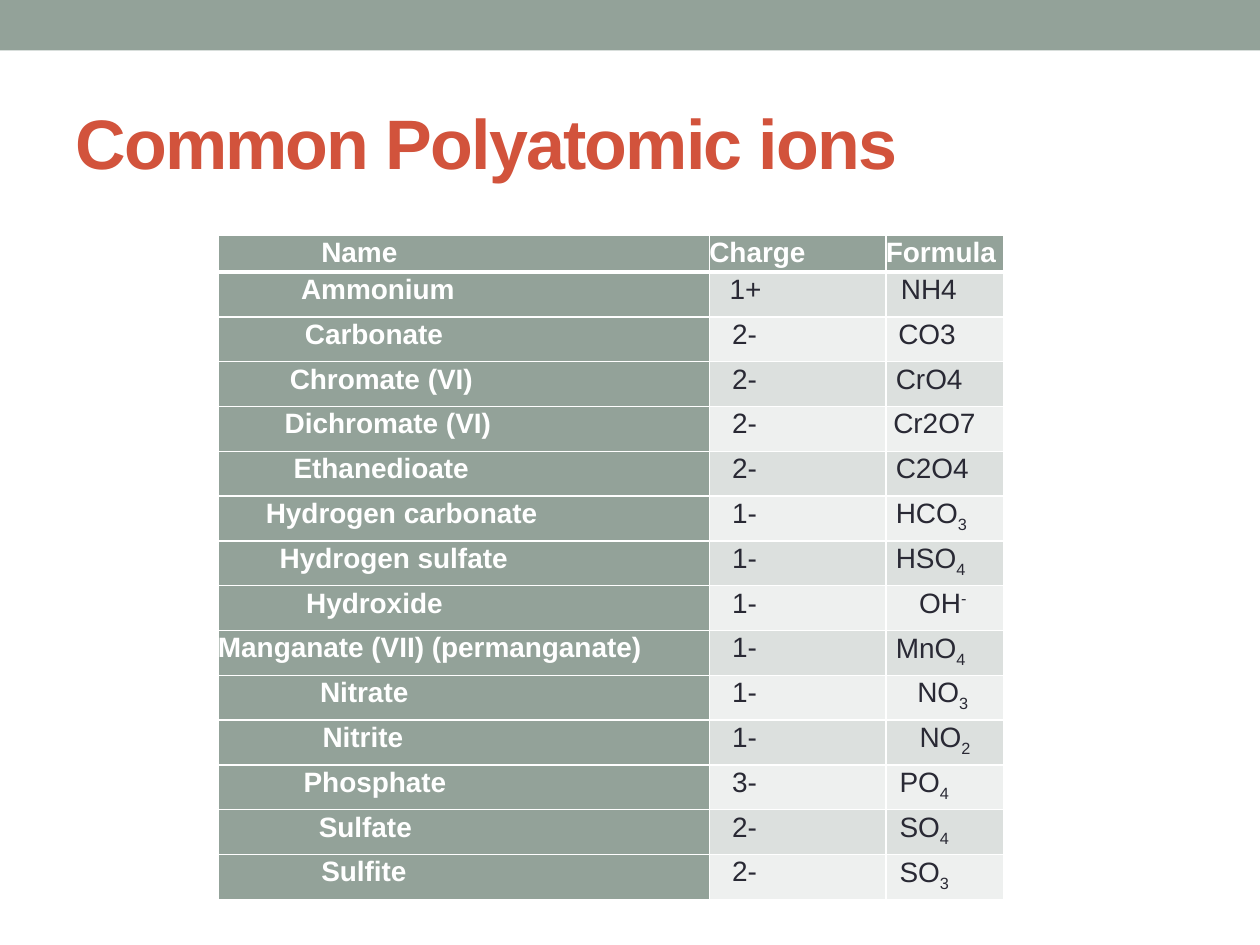
from dataclasses import dataclass

from lxml.etree import SubElement
from pptx import Presentation
from pptx.dml.color import RGBColor
from pptx.enum.shapes import MSO_SHAPE
from pptx.enum.text import MSO_ANCHOR, PP_ALIGN
from pptx.oxml.ns import qn
from pptx.util import Inches, Pt


@dataclass(frozen=True)
class Theme:
    """Colours, type sizes and spacing of the slide."""
    sage: str = "93A299"
    red: str = "D2533C"
    white: str = "FFFFFF"
    ink: str = "292934"
    bands: tuple = ("DCE0DE", "EEF0EF")
    font: str = "Arial"
    title_size: int = 40
    table_size: int = 16
    line_spacing: float = 1.07
    rule: int = 1
    header_rule: int = 3


THEME = Theme()
CENTRED = None
SUB, SUPER = -25000, 30000
COLUMN_WIDTHS = (3.9, 1.4, 0.94)
HEADER_HEIGHT = 0.29
HEADINGS = (("Name", 0.82), ("Charge", 0), ("Formula ", 0))
IONS = (
    ("Ammonium", 0.66, "1+", ("NH4",), 0.12),
    ("Carbonate", 0.69, "2-", ("CO3",), 0.1),
    ("Chromate (VI)", 0.57, "2-", ("CrO4",), 0.08),
    ("Dichromate (VI)", 0.53, "2-", ("Cr2O7",), 0.06),
    ("Ethanedioate", 0.6, "2-", ("C2O4",), 0.08),
    ("Hydrogen carbonate", 0.38, "1-", ("HCO", "3", SUB), 0.08),
    ("Hydrogen sulfate", 0.49, "1-", ("HSO", "4", SUB), 0.08),
    ("Hydroxide", 0.7, "1-", ("OH", "- ", SUPER), CENTRED),
    ("Manganate (VII) (permanganate)", 0, "1-", ("MnO", "4", SUB), 0.08),
    ("Nitrate", 0.81, "1-", ("NO", "3 ", SUB), CENTRED),
    ("Nitrite", 0.83, "1-", ("NO", "2", SUB), CENTRED),
    ("Phosphate", 0.68, "3-", ("PO", "4", SUB), 0.11),
    ("Sulfate", 0.8, "2-", ("SO", "4", SUB), 0.11),
    ("Sulfite", 0.82, "2-", ("SO", "3", SUB), 0.11),
)


def add_run(paragraph, text, size, color, bold):
    """Append a formatted run to a paragraph."""
    run = paragraph.add_run()
    run.text = text
    run.font.name = THEME.font
    run.font.size = Pt(size)
    run.font.bold = bold
    run.font.color.rgb = RGBColor.from_string(color)
    return run


def set_borders(cell, top, bottom):
    """Draw white rules around a cell, with the given top and bottom weights."""
    properties = cell._tc.get_or_add_tcPr()
    weights = {"L": THEME.rule, "R": THEME.rule, "T": top, "B": bottom}
    for side, weight in weights.items():
        line = SubElement(properties, qn(f"a:ln{side}"), w=str(Pt(weight)))
        SubElement(SubElement(line, qn("a:solidFill")), qn("a:srgbClr"), val=THEME.white)


def fill_cell(cell, parts, indent, fill, color, bold):
    """Colour a cell and write its text, with an optional raised or lowered part."""
    cell.margin_left = cell.margin_right = cell.margin_top = cell.margin_bottom = 0
    cell.fill.solid()
    cell.fill.fore_color.rgb = RGBColor.from_string(fill)
    paragraph = cell.text_frame.paragraphs[0]
    paragraph.line_spacing = THEME.line_spacing
    if indent is CENTRED:
        paragraph.alignment = PP_ALIGN.CENTER
    else:
        paragraph._p.get_or_add_pPr().set("marL", str(Inches(indent)))
    base, *script = parts
    add_run(paragraph, base, THEME.table_size, color, bold)
    if script:
        text, offset = script
        run = add_run(paragraph, text, THEME.table_size, color, bold)
        run.font._element.set("baseline", str(offset))


def add_top_band(slide, left, top, width, height):
    """Place the plain band along the top edge."""
    band = slide.shapes.add_shape(MSO_SHAPE.RECTANGLE, left, top, width, height)
    band.shadow.inherit = False
    band.fill.solid()
    band.fill.fore_color.rgb = RGBColor.from_string(THEME.sage)
    band.line.fill.background()


def add_title(slide, left, top, width, height):
    """Place the slide title."""
    frame = slide.shapes.add_textbox(left, top, width, height).text_frame
    frame.word_wrap = True
    frame.vertical_anchor = MSO_ANCHOR.MIDDLE
    run = add_run(frame.paragraphs[0], "Common Polyatomic ions",
                  THEME.title_size, THEME.red, True)
    run.font._element.set("spc", "-100")


def add_ion_table(slide, left, top, width, height):
    """Place the table of ions, with one header row and equal body rows."""
    table = slide.shapes.add_table(len(IONS) + 1, len(COLUMN_WIDTHS),
                                   left, top, width, height).table
    for column, column_width in zip(table.columns, COLUMN_WIDTHS):
        column.width = Inches(column_width)
    header, *body = table.rows
    header.height = Inches(HEADER_HEIGHT)
    for row in body:
        row.height = (height - header.height) // len(IONS)

    for cell, (heading, indent) in zip(header.cells, HEADINGS):
        set_borders(cell, THEME.rule, THEME.header_rule)
        fill_cell(cell, (heading,), indent, THEME.sage, THEME.white, True)

    for index, (row, ion) in enumerate(zip(body, IONS)):
        name, name_indent, charge, formula, formula_indent = ion
        for cell in row.cells:
            set_borders(cell, THEME.rule if index else THEME.header_rule, THEME.rule)
        name_cell, charge_cell, formula_cell = row.cells
        band = THEME.bands[index % 2]
        charge_indent = 0.18 if charge.endswith("-") else 0.16
        fill_cell(name_cell, (name,), name_indent, THEME.sage, THEME.white, True)
        fill_cell(charge_cell, (charge,), charge_indent, band, THEME.ink, False)
        fill_cell(formula_cell, formula, formula_indent, band, THEME.ink, False)


def main():
    """Build and save the slide."""
    deck = Presentation()
    deck.slide_width, deck.slide_height = Inches(10), Inches(7.5)
    slide = deck.slides.add_slide(deck.slide_layouts[6])
    add_top_band(slide, 0, 0, deck.slide_width, Inches(0.4))
    add_title(slide, Inches(0.5), Inches(0.58), Inches(9), Inches(1.08))
    add_ion_table(slide, Inches(1.73), Inches(1.87), Inches(6.24), Inches(5.27))
    deck.save("out.pptx")


if __name__ == "__main__":
    main()
